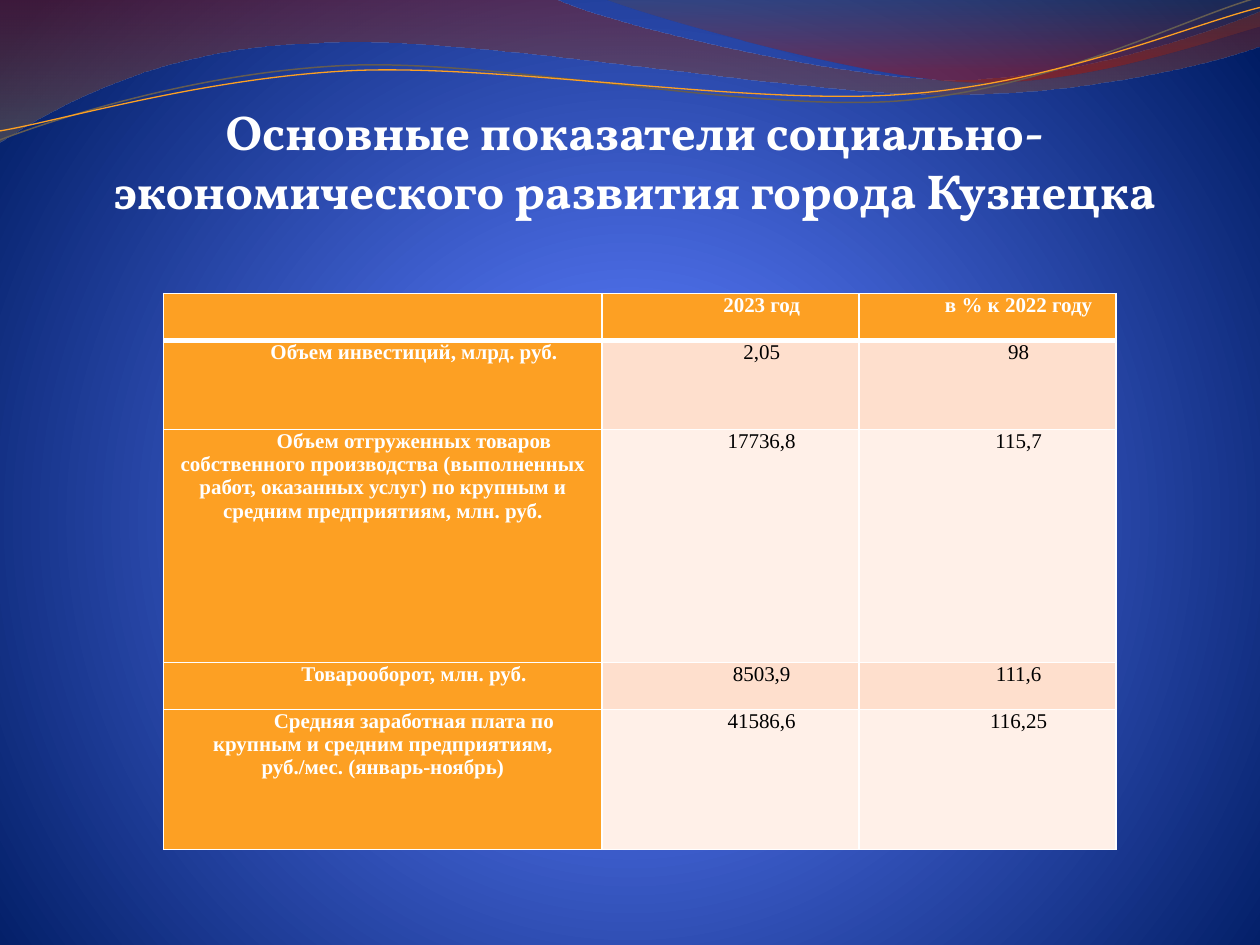
import dataclasses

import pptx
import pptx.dml.color
import pptx.enum.text
import pptx.oxml
import pptx.oxml.ns
import pptx.util

Cm = pptx.util.Cm
Pt = pptx.util.Pt
qn = pptx.oxml.ns.qn
NS = pptx.oxml.ns.nsdecls("a")


@dataclasses.dataclass(frozen=True)
class Theme:
    white: str = "FFFFFF"
    black: str = "000000"
    accent: str = "FDA023"
    thin_wave: str = "645C51"
    bands: tuple = ("FEDFCD", "FFF0E8")
    title_font: str = "Vollkorn"
    table_font: str = "Times New Roman"
    title_size: int = 28
    table_size: int = 12


THEME = Theme()


@dataclasses.dataclass(frozen=True)
class Stop:
    position: int
    color: str
    opacity: int = 100


@dataclasses.dataclass(frozen=True)
class Outline:
    """Path in cm; a segment is one point (line) or three (Bezier curve)."""
    start: tuple
    segments: tuple


@dataclasses.dataclass(frozen=True)
class Band:
    outline: Outline
    stops: tuple


@dataclasses.dataclass(frozen=True)
class Strand:
    outline: Outline
    color: str
    width: float


BACKGROUND = (Stop(0, "B1BDDC"), Stop(25, "4D6EE7"), Stop(100, "001C63"))
CIRCLE = ('<a:path path="circle"><a:fillToRect l="10000" t="110000" '
          'r="10000" b="100000"/></a:path>')
DOWNWARD = '<a:lin ang="5400000" scaled="1"/>'

BANDS = (
    Band(Outline((0, 0), (
        ((11.18, -0.03),),
        ((12.09, 0.43), (16.87, 1.6), (19.25, 1.6)),
        ((21.67, 1.6), (24.33, 0.66), (25.4, 0.23)),
        ((25.43, 0.91),),
        ((24.97, 1.12), (22.1, 1.93), (18.95, 1.9)),
        ((15.8, 1.9), (9.7, 0.71), (6.53, 0.86)),
        ((3.28, 0.91), (1.17, 2.11), (-0.03, 2.87)),
        ((0, 0),),
    )), (Stop(0, "88170C", 45), Stop(100, "6C5F4E", 55))),
    Band(Outline((12.17, -0.03), (
        ((12.93, 0.28), (17.32, 1.57), (19.53, 1.65)),
        ((21.74, 1.75), (24.41, 0.81), (25.4, 0.53)),
        ((25.4, 0),),
        ((12.17, -0.03),),
    )), (Stop(0, "564D42", 30), Stop(80, "AF1202", 45))),
)
STRAND_ROTATION = -2.7
STRANDS = (
    Strand(Outline((-0.05, 2.22), (
        ((1.19, 1.82), (4.02, 1.04), (7.05, 1.05)),
        ((10.05, 1.07), (15.02, 2.37), (18.08, 2.29)),
        ((21.13, 2.2), (23.87, 0.91), (25.41, 0.55)),
    )), THEME.thin_wave, 0.85),
    Strand(Outline((-0.04, 2.04), (
        ((1.16, 1.9), (4.18, 1.15), (7.2, 1.16)),
        ((10.25, 1.19), (15.13, 2.25), (18.19, 2.16)),
        ((21.21, 2.1), (23.93, 1.06), (25.45, 0.75)),
    )), THEME.accent, 0.75),
)

TITLE = "Основные показатели социально-экономического развития города Кузнецка"
COLUMN_WIDTHS = (8.84, 5.18, 5.18)
ROW_HEIGHTS = (0.94, 1.8, 4.7, 0.94, 2.82)
ROWS = (
    ("", "2023 год", "в % к 2022 году"),
    ("Объем инвестиций, млрд. руб.", "2,05", "98"),
    ("Объем отгруженных товаров собственного производства (выполненных работ, "
     "оказанных услуг) по крупным и средним предприятиям, млн. руб.",
     "17736,8", "115,7"),
    ("Товарооборот, млн. руб.", "8503,9", "111,6"),
    ("Средняя заработная плата по крупным и средним предприятиям, руб./мес. "
     "(январь-ноябрь)", "41586,6", "116,25"),
)


def rgb(color: str) -> pptx.dml.color.RGBColor:
    return pptx.dml.color.RGBColor.from_string(color)


def set_gradient(fill, parent, stops: tuple, direction: str) -> None:
    """Put a gradient, which may be transparent, in place of the fill."""
    fill.solid()
    marks = "".join(
        f'<a:gs pos="{stop.position * 1000}"><a:srgbClr val="{stop.color}">'
        f'<a:alpha val="{stop.opacity * 1000}"/></a:srgbClr></a:gs>'
        for stop in stops)
    gradient = pptx.oxml.parse_xml(
        f'<a:gradFill {NS} rotWithShape="1"><a:gsLst>{marks}</a:gsLst>'
        f'{direction}</a:gradFill>')
    parent.replace(parent.find(qn("a:solidFill")), gradient)


def add_outline(shapes, outline: Outline, close: bool):
    """Build a freeform, then join each three-point segment into a curve."""
    builder = shapes.build_freeform(*map(Cm, outline.start))
    builder.add_line_segments(
        [(Cm(x), Cm(y)) for segment in outline.segments for x, y in segment],
        close=close)
    sp = builder.convert_to_shape()
    sp.shadow.inherit = False
    lines = iter(sp._element.findall(".//" + qn("a:lnTo")))
    for segment in outline.segments:
        parts = [next(lines) for _ in segment]
        if len(parts) == 3:
            curve = pptx.oxml.parse_xml(f"<a:cubicBezTo {NS}/>")
            parts[0].addprevious(curve)
            for part in parts:
                curve.append(part[0])
                part.getparent().remove(part)
    return sp


def draw_band(shapes, band: Band) -> None:
    sp = add_outline(shapes, band.outline, close=True)
    set_gradient(sp.fill, sp._element.spPr, band.stops, DOWNWARD)
    sp.line.fill.background()


def draw_strand(shapes, strand: Strand) -> None:
    sp = add_outline(shapes, strand.outline, close=False)
    sp.rotation = STRAND_ROTATION
    sp.fill.background()
    sp.line.color.rgb = rgb(strand.color)
    sp.line.width = Pt(strand.width)


def style_paragraph(p, font: str, size: int, color: str, bold: bool) -> None:
    p.alignment = pptx.enum.text.PP_ALIGN.CENTER
    p.font.name = font
    p.font.size = Pt(size)
    p.font.bold = bold
    p.font.color.rgb = rgb(color)


def draw_title(s) -> None:
    tf = s.shapes.add_textbox(Cm(1.7), Cm(1.93), Cm(22.2), Cm(2.64)).text_frame
    tf.word_wrap = True
    tf.auto_size = pptx.enum.text.MSO_AUTO_SIZE.SHAPE_TO_FIT_TEXT
    tf.text = TITLE
    style_paragraph(tf.paragraphs[0], THEME.title_font, THEME.title_size,
                    THEME.white, True)


def set_borders(cell, top: float, bottom: float) -> None:
    widths = {"lnL": 1, "lnR": 1, "lnT": top, "lnB": bottom}
    for i, (tag, width) in enumerate(widths.items()):
        cell._tc.get_or_add_tcPr().insert(i, pptx.oxml.parse_xml(
            f'<a:{tag} {NS} w="{Pt(width)}"><a:solidFill>'
            f'<a:srgbClr val="{THEME.white}"/></a:solidFill></a:{tag}>'))


def fill_cell(cell, text: str, row: int, column: int) -> None:
    is_heading = row == 0 or column == 0
    cell.margin_left = cell.margin_right = Cm(0.18)
    cell.margin_top = cell.margin_bottom = 0
    cell.text = text
    p = cell.text_frame.paragraphs[0]
    style_paragraph(p, THEME.table_font, THEME.table_size,
                    THEME.white if is_heading else THEME.black, is_heading)
    p._p.get_or_add_pPr().set("indent", str(Cm(1.25)))
    cell.fill.solid()
    cell.fill.fore_color.rgb = rgb(
        THEME.accent if is_heading else THEME.bands[(row - 1) % 2])
    set_borders(cell, top=3 if row == 1 else 1, bottom=3 if row == 0 else 1)


def draw_table(s) -> None:
    table = s.shapes.add_table(
        len(ROWS), len(COLUMN_WIDTHS), Cm(3.3), Cm(5.92),
        Cm(sum(COLUMN_WIDTHS)), Cm(sum(ROW_HEIGHTS))).table
    for column, width in zip(table.columns, COLUMN_WIDTHS):
        column.width = Cm(width)
    for i, (texts, height) in enumerate(zip(ROWS, ROW_HEIGHTS)):
        table.rows[i].height = Cm(height)
        for j, text in enumerate(texts):
            fill_cell(table.cell(i, j), text, i, j)


def main() -> None:
    prs = pptx.Presentation()
    prs.slide_width, prs.slide_height = Cm(25.4), Cm(19.05)
    s = prs.slides.add_slide(prs.slide_layouts[6])
    fill = s.background.fill
    set_gradient(fill, s._element.find(".//" + qn("p:bgPr")), BACKGROUND, CIRCLE)
    for band in BANDS:
        draw_band(s.shapes, band)
    strands = s.shapes.add_group_shape()
    for strand in STRANDS:
        draw_strand(strands.shapes, strand)
    draw_title(s)
    draw_table(s)
    prs.save("out.pptx")


if __name__ == "__main__":
    main()
